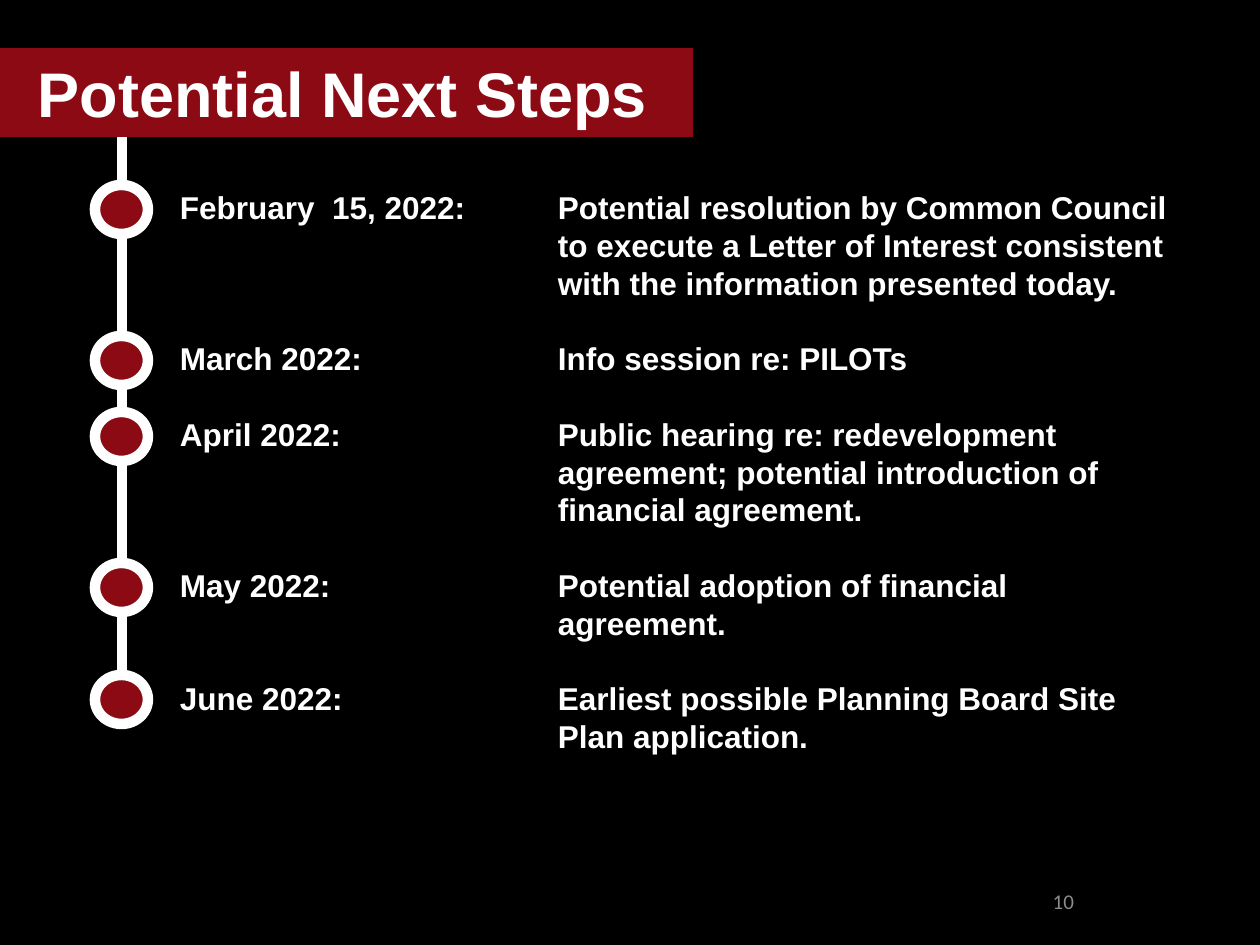
from lxml.etree import SubElement
from pptx import Presentation
from pptx.dml.color import RGBColor
from pptx.enum.shapes import MSO_CONNECTOR as CONN, MSO_SHAPE as SHAPE
from pptx.enum.text import MSO_ANCHOR as ANCHOR, MSO_AUTO_SIZE as FIT, PP_ALIGN as ALIGN
from pptx.oxml.ns import qn
from pptx.util import Emu, Pt

COLORS = {"black": "000000", "red": "8C0A14", "white": "FFFFFF", "gray": "8C8C8C"}
PX_PER_INCH = 126
LINE_PITCH = 21.6
STEPS = [
    ("February  15, 2022:", "Potential resolution by Common Council to execute a "
     "Letter of Interest consistent with the information presented today."),
    ("March 2022:", "Info session re: PILOTs"),
    ("April 2022:", "Public hearing re: redevelopment agreement; potential "
     "introduction of financial agreement."),
    ("May 2022:", "Potential adoption of financial agreement."),
    ("June 2022:", "Earliest possible Planning Board Site Plan application."),
]
MARKER_TOPS = [185, 336, 412, 563, 675]


def px(n):
    return Emu(round(n * 914400 / PX_PER_INCH))


def rgb(name):
    return RGBColor.from_string(COLORS[name])


def place(sp, x, y, w, h):
    sp.left, sp.top, sp.width, sp.height = px(x), px(y), px(w), px(h)


def fill(target, color):
    target.fill.solid()
    target.fill.fore_color.rgb = rgb(color)


def outline(sp, color, width):
    sp.line.color.rgb = rgb(color)
    sp.line.width = Pt(width)


def frame(sp, anchor, left=13):
    tf = sp.text_frame
    tf.word_wrap, tf.auto_size, tf.vertical_anchor = True, FIT.NONE, anchor
    tf.margin_left, tf.margin_right = px(left), px(13)
    tf.margin_top = tf.margin_bottom = px(6)
    return tf


def write(p, text, size=18, font="Arial", color="white", bold=True,
          align=ALIGN.LEFT, before=0, pitch=None, hang=None):
    """Format a paragraph; hang is (left margin, first-line indent) in px."""
    p.alignment, p.space_before = align, Pt(before)
    if pitch:
        p.line_spacing = Pt(pitch)
    if hang:
        pPr = p._p.get_or_add_pPr()
        pPr.set("marL", str(px(hang[0])))
        pPr.set("indent", str(px(hang[1])))
        SubElement(pPr, qn("a:buNone"))
    r = p.add_run()
    r.text = text
    r.font.size, r.font.name, r.font.bold = Pt(size), font, bold
    r.font.color.rgb = rgb(color)


def add_title(s, text):
    sp = s.shapes.title
    place(sp, 0, 48, 693, 89)
    fill(sp, "red")
    write(frame(sp, ANCHOR.MIDDLE, left=38).paragraphs[0], text, size=36)


def add_steps(s, steps):
    sp = s.placeholders[1]
    place(sp, 166, 182, 1031, 585)
    tf = frame(sp, ANCHOR.TOP)
    for i, (date, step) in enumerate(steps):
        p = tf.add_paragraph() if i else tf.paragraphs[0]
        write(p, f"{date}\t{step}", before=LINE_PITCH if i else 0,
              pitch=LINE_PITCH, hang=(379, -378))


def add_timeline(s, tops):
    line = s.shapes.add_connector(CONN.STRAIGHT, px(122), px(137), px(122), px(726))
    outline(line, "white", 6)
    SubElement(line._element.spPr, qn("a:effectLst"))
    for top in tops:
        sp = s.shapes.add_shape(SHAPE.OVAL, px(95), px(top), px(53), px(49))
        sp.shadow.inherit = False
        fill(sp, "red")
        outline(sp, "white", 6)


def add_page_number(s, number):
    sp = s.shapes.add_textbox(px(803), px(876), px(284), px(50))
    write(frame(sp, ANCHOR.MIDDLE).paragraphs[0], number, size=12, font="Calibri",
          color="gray", bold=False, align=ALIGN.RIGHT)


def main():
    prs = Presentation()
    prs.slide_width, prs.slide_height = px(1260), px(945)
    s = prs.slides.add_slide(prs.slide_layouts[1])
    fill(s.background, "black")
    add_page_number(s, "10")
    add_title(s, "Potential Next Steps")
    add_timeline(s, MARKER_TOPS)
    add_steps(s, STEPS)
    prs.save("out.pptx")


if __name__ == "__main__":
    main()
